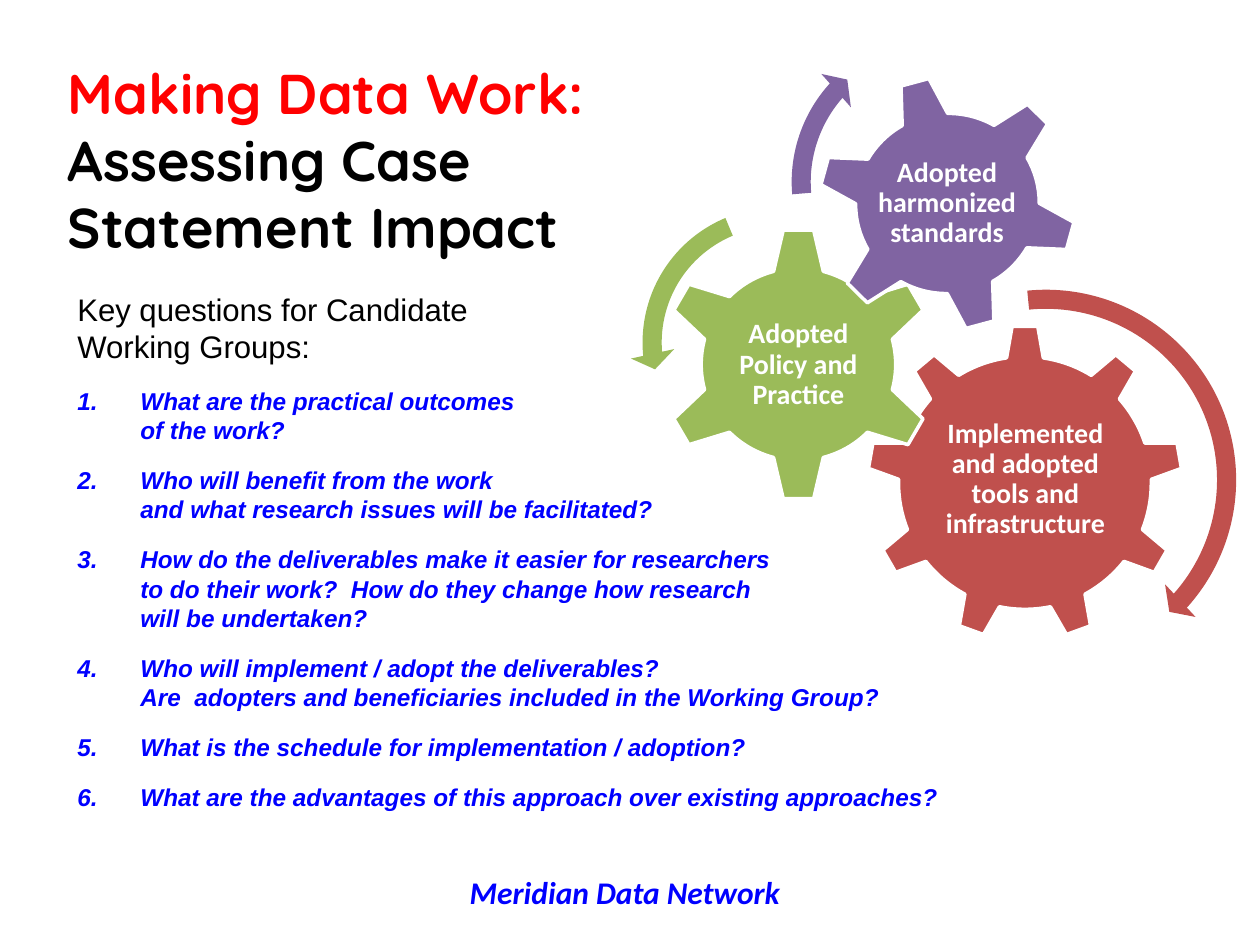
"""Build the slide on assessing case statement impact."""
from dataclasses import dataclass

from lxml import etree
from pptx import Presentation
from pptx.dml.color import RGBColor
from pptx.enum.shapes import MSO_SHAPE
from pptx.enum.text import MSO_ANCHOR, MSO_AUTO_SIZE, PP_ALIGN
from pptx.oxml.ns import qn
from pptx.util import Emu, Pt

GEAR_6, GEAR_9 = MSO_SHAPE.GEAR_6, MSO_SHAPE.GEAR_9
ARROW, LEFT_ARROW = MSO_SHAPE.CIRCULAR_ARROW, MSO_SHAPE.LEFT_CIRCULAR_ARROW
TOP, MIDDLE = MSO_ANCHOR.TOP, MSO_ANCHOR.MIDDLE
LEFT, CENTER = PP_ALIGN.LEFT, PP_ALIGN.CENTER
NO_AUTOFIT = MSO_AUTO_SIZE.NONE

PX_PER_INCH = 126
WHITE, BLACK, RED, BLUE = "FFFFFF", "000000", "FF0000", "0000FF"
BRICK, GREEN, PURPLE = "C0504D", "9BBB59", "8064A2"

Box = tuple[int, int, int, int]


@dataclass(frozen=True)
class Font:
    """Character formatting of a run."""
    name: str
    size: float
    color: str
    bold: bool = False
    italic: bool = False


@dataclass(frozen=True)
class Gear:
    """A gear wheel with its label."""
    kind: MSO_SHAPE
    box: Box
    color: str
    label: str
    label_box: Box
    rotation: int = 0


@dataclass(frozen=True)
class Arrow:
    """A curved arrow beside a gear."""
    kind: MSO_SHAPE
    box: Box
    color: str
    adjustments: tuple[float, ...]


TITLE_RED = Font("Quicksand", 32, RED, bold=True)
TITLE_BLACK = Font("Quicksand", 32, BLACK, bold=True)
INTRO = Font("Arial", 17.8, BLACK)
QUESTION = Font("Arial", 13.9, BLUE, bold=True, italic=True)
LABEL = Font("Calibri", 16, WHITE, bold=True)
FOOTER = Font("Calibri", 18, BLUE, bold=True, italic=True)

GEARS = [
    Gear(GEAR_9, (867, 325, 316, 316), BRICK,
         "Implemented and adopted tools and infrastructure", (931, 398, 189, 163)),
    Gear(GEAR_6, (660, 227, 277, 275), GREEN,
         "Adopted Policy and Practice", (729, 297, 139, 136)),
    Gear(GEAR_6, (817, 75, 261, 257), PURPLE,
         "Adopted harmonized standards", (874, 131, 146, 145), rotation=345),
]
ARROWS = [
    Arrow(ARROW, (843, 277, 406, 406), BRICK, (0.047, 2.99, 25.158, 158.62, 0.055)),
    Arrow(LEFT_ARROW, (630, 195, 295, 295), GREEN, (0.065, 4.3, 104.891, 148.378, 0.075)),
    Arrow(ARROW, (779, 23, 318, 318), PURPLE, (0.06, 3.941, 133.138, 105.082, 0.07)),
]
QUESTIONS = [
    "What are the practical outcomes\nof the work?",
    "Who will benefit from the work\nand what research issues will be facilitated?",
    "How do the deliverables make it easier for researchers\n"
    "to do their work?  How do they change how research\nwill be undertaken?",
    "Who will implement / adopt the deliverables?\n"
    "Are  adopters and beneficiaries included in the Working Group?",
    "What is the schedule for implementation / adoption?",
    "What are the advantages of this approach over existing approaches?",
]


def px(value: int) -> Emu:
    """Turn pixels into EMU."""
    return Emu(round(value * 914400 / PX_PER_INCH))


def rgb(color: str) -> RGBColor:
    """Turn a hex string into a colour."""
    return RGBColor.from_string(color)


def add_runs(p, text: str, font: Font) -> None:
    """Add text to a paragraph, one run for each line."""
    for i, line in enumerate(text.split("\n")):
        if i:
            p.add_line_break()
        r = p.add_run()
        r.text = line
        f = r.font
        f.name, f.size, f.bold, f.italic = font.name, Pt(font.size), font.bold, font.italic
        f.color.rgb = rgb(font.color)


def add_text_box(slide, box: Box, anchor=TOP, inset: int | None = None, wrap: bool = True):
    """Add a text box and return its text frame."""
    tf = slide.shapes.add_textbox(*map(px, box)).text_frame
    tf.word_wrap, tf.vertical_anchor, tf.auto_size = wrap, anchor, NO_AUTOFIT
    if inset is not None:
        tf.margin_left = tf.margin_top = tf.margin_right = tf.margin_bottom = px(inset)
    return tf


def add_filled(slide, kind: MSO_SHAPE, box: Box, color: str):
    """Add a preset shape with a flat fill and no outline."""
    sp = slide.shapes.add_shape(kind, *map(px, box))
    sp.shadow.inherit = False
    sp.fill.solid()
    sp.fill.fore_color.rgb = rgb(color)
    sp.line.fill.background()
    return sp


def add_gear(slide, gear: Gear) -> None:
    """Draw a white-edged gear and its centred label."""
    sp = add_filled(slide, gear.kind, gear.box, gear.color)
    sp.rotation = gear.rotation
    sp.line.color.rgb = rgb(WHITE)
    sp.line.width = Pt(2)
    p = add_text_box(slide, gear.label_box, MIDDLE, inset=3).paragraphs[0]
    p.alignment, p.line_spacing = CENTER, 0.9
    add_runs(p, gear.label, LABEL)


def add_arrow(slide, arrow: Arrow) -> None:
    """Draw a curved arrow."""
    sp = add_filled(slide, arrow.kind, arrow.box, arrow.color)
    for i, value in enumerate(arrow.adjustments):
        sp.adjustments[i] = value


def number_paragraph(p, indent: int) -> None:
    """Give a paragraph a hanging automatic number."""
    pPr = p._p.get_or_add_pPr()
    pPr.set("marL", str(px(indent)))
    pPr.set("indent", str(-px(indent)))
    etree.SubElement(pPr, qn("a:buFont"), typeface="+mj-lt")
    etree.SubElement(pPr, qn("a:buAutoNum"), type="arabicPeriod")


def set_title(slide) -> None:
    """Place and fill the title."""
    sp = slide.shapes.title
    sp.left, sp.top, sp.width, sp.height = map(px, (55, 26, 924, 266))
    tf = sp.text_frame
    tf.word_wrap, tf.vertical_anchor, tf.auto_size = True, MIDDLE, NO_AUTOFIT
    p = tf.paragraphs[0]
    p.alignment, p.line_spacing = LEFT, 1.0
    add_runs(p, "Making Data Work:", TITLE_RED)
    p.add_line_break()
    add_runs(p, "Assessing Case\nStatement Impact", TITLE_BLACK)


def add_questions(slide) -> None:
    """Add the introduction and the numbered questions."""
    tf = add_text_box(slide, (65, 284, 1111, 564))
    p = tf.paragraphs[0]
    p.space_before = Pt(6)
    add_runs(p, "Key questions for Candidate\nWorking Groups:", INTRO)
    for question in QUESTIONS:
        p = tf.add_paragraph()
        p.space_before = Pt(12)
        number_paragraph(p, 63)
        add_runs(p, question, QUESTION)


def add_footer(slide) -> None:
    """Add the organisation name on one centred line."""
    p = add_text_box(slide, (461, 867, 328, 50), wrap=False).paragraphs[0]
    p.alignment = CENTER
    add_runs(p, "Meridian Data Network", FOOTER)


def main() -> None:
    """Build and save the slide."""
    prs = Presentation()
    prs.slide_width, prs.slide_height = px(1260), px(945)
    slide = prs.slides.add_slide(prs.slide_layouts[5])
    set_title(slide)
    add_footer(slide)
    for gear in GEARS:
        add_gear(slide, gear)
    for arrow in ARROWS:
        add_arrow(slide, arrow)
    add_questions(slide)
    prs.save("out.pptx")


if __name__ == "__main__":
    main()
